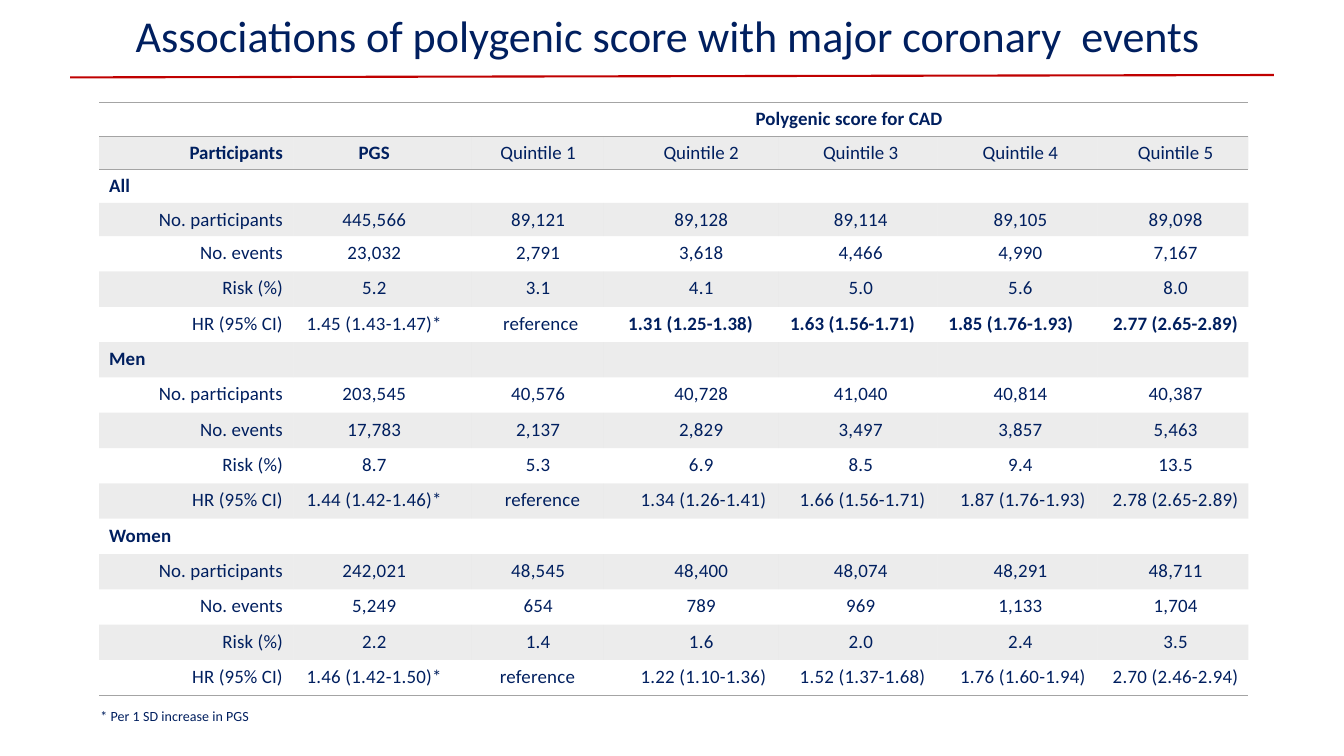
from lxml.etree import SubElement
from pptx import Presentation
from pptx.dml.color import RGBColor
from pptx.enum.shapes import MSO_CONNECTOR
from pptx.enum.text import MSO_ANCHOR, PP_ALIGN
from pptx.oxml.ns import qn
from pptx.util import Cm, Pt

COLORS = {"navy": "001F5F", "red": "C00000", "gray": "A4A4A4"}
LEFT, CENTER, RIGHT = PP_ALIGN.LEFT, PP_ALIGN.CENTER, PP_ALIGN.RIGHT
PLAIN_STYLE = "{2D5ABB26-0587-4C30-8999-92F81FD0307C}"

COLUMN_WIDTHS = [4.9, 4.47, 3.35, 4.39, 4.01, 4.04, 3.8]
ROW_HEIGHTS = [0.68] + [0.84] * 4 + [0.89] * 13
COLUMN_MARGINS = [(0, 0.27), (0, 0.41), (0.03, 0), (0.51, 0), (0.15, 0), (0.15, 0), (0.13, 0)]
BOLD_HR_INDENTS = {3: 0.61, 4: 0.3, 5: 0.28}
REFERENCE_INDENTS = {"All": 0.16, "Men": 0.25, "Women": 0}

HEADINGS = ["Participants", "PGS"] + [f"Quintile {n}" for n in range(1, 6)]
MEASURES = ["No. participants", "No. events", "Risk (%)", "HR (95% CI)"]
GROUPS = {
    "All": [
        ["445,566", "89,121", "89,128", "89,114", "89,105", "89,098"],
        ["23,032", "2,791", "3,618", "4,466", "4,990", "7,167"],
        ["5.2", "3.1", "4.1", "5.0", "5.6", "8.0"],
        ["1.45 (1.43-1.47)*", "reference", "1.31 (1.25-1.38)", "1.63 (1.56-1.71)",
         "1.85 (1.76-1.93)", "2.77 (2.65-2.89)"],
    ],
    "Men": [
        ["203,545", "40,576", "40,728", "41,040", "40,814", "40,387"],
        ["17,783", "2,137", "2,829", "3,497", "3,857", "5,463"],
        ["8.7", "5.3", "6.9", "8.5", "9.4", "13.5"],
        ["1.44 (1.42-1.46)*", "reference", "1.34 (1.26-1.41)", "1.66 (1.56-1.71)",
         "1.87 (1.76-1.93)", "2.78 (2.65-2.89)"],
    ],
    "Women": [
        ["242,021", "48,545", "48,400", "48,074", "48,291", "48,711"],
        ["5,249", "654", "789", "969", "1,133", "1,704"],
        ["2.2", "1.4", "1.6", "2.0", "2.4", "3.5"],
        ["1.46 (1.42-1.50)*", "reference", "1.22 (1.10-1.36)", "1.52 (1.37-1.68)",
         "1.76 (1.60-1.94)", "2.70 (2.46-2.94)"],
    ],
}


def color(name):
    return RGBColor.from_string(COLORS[name])


def write(frame, text, size, align=LEFT, bold=False, before=0, spacing=0):
    paragraph = frame.paragraphs[0]
    paragraph.text = text
    paragraph.alignment = align
    paragraph.space_before = Pt(before)
    font = paragraph.font
    font.name, font.size, font.bold = "Calibri", Pt(size), bold
    font.color.rgb = color("navy")
    paragraph._p.get_or_add_pPr().get_or_add_defRPr().set("spc", str(spacing))
    return paragraph


def set_frame(frame):
    frame.word_wrap = True
    frame.vertical_anchor = MSO_ANCHOR.TOP
    frame.margin_left = frame.margin_right = frame.margin_bottom = 0
    frame.margin_top = Cm(0.05)


def add_title(slide, opening, ending):
    title = slide.shapes.title
    title.left, title.top, title.width, title.height = Cm(3.42), Cm(0.16), Cm(27.08), Cm(1.42)
    set_frame(title.text_frame)
    heading = write(title.text_frame, opening, 31.5, before=1.3)
    for text, spacing in ((" ", 710), (ending, 0)):
        part = heading.add_run()
        part.text = text
        part._r.get_or_add_rPr().set("spc", str(spacing))


def add_rule(slide):
    rule = slide.shapes.add_connector(
        MSO_CONNECTOR.STRAIGHT, Cm(1.77), Cm(1.95), Cm(32.1), Cm(1.89))
    rule.line.color.rgb = color("red")
    rule.line.width = Pt(1.5)
    SubElement(rule._element.spPr, qn("a:effectLst"))


def add_footnote(slide, text):
    footnote = slide.shapes.add_textbox(Cm(2.5), Cm(17.78), Cm(4.2), Cm(0.5)).text_frame
    set_frame(footnote)
    footnote.margin_left = Cm(0.03)
    write(footnote, text, 10, before=1.2, spacing=5)


def set_border(cell, sides):
    properties = cell._tc.get_or_add_tcPr()
    for position, side in enumerate(sides):
        edge = properties.makeelement(qn(f"a:ln{side}"), {"w": str(Pt(1))})
        fill = SubElement(edge, qn("a:solidFill"))
        SubElement(fill, qn("a:srgbClr"), val=COLORS["gray"])
        properties.insert(position, edge)


def shade(cell, banded):
    if not banded:
        cell.fill.background()
        return
    cell.fill.solid()
    cell.fill.fore_color.rgb = color("gray")
    tint = cell._tc.tcPr.find(f".//{qn('a:srgbClr')}")
    SubElement(tint, qn("a:alpha"), val="20000")


def fill_cell(cell, text, align=LEFT, bold=False, margins=(0, 0), top=0.14, spacing=15):
    cell.margin_left, cell.margin_right = Cm(margins[0]), Cm(margins[1])
    cell.margin_top, cell.margin_bottom = Cm(top), 0
    cell.vertical_anchor = MSO_ANCHOR.TOP
    return write(cell.text_frame, text, 13.5, align, bold, 4, spacing)


def cell_layout(group, measure, column):
    margins = COLUMN_MARGINS[column]
    if column == 0:
        return RIGHT, False, margins
    if measure != MEASURES[-1] or column == 1:
        return CENTER, False, margins
    if column == 2:
        return CENTER, False, (REFERENCE_INDENTS[group], 0)
    bold = group == "All"
    if column not in BOLD_HR_INDENTS:
        return CENTER, bold, margins
    if bold:
        return LEFT, True, (BOLD_HR_INDENTS[column], 0)
    return RIGHT, False, (0, 0.3)


def add_results(slide):
    results = slide.shapes.add_table(
        len(ROW_HEIGHTS), len(COLUMN_WIDTHS), Cm(2.5), Cm(1.91),
        Cm(sum(COLUMN_WIDTHS)), Cm(sum(ROW_HEIGHTS))).table
    results.first_row = results.horz_banding = False
    results._tbl.tblPr.find(qn("a:tableStyleId")).text = PLAIN_STYLE
    for column, width in zip(results.columns, COLUMN_WIDTHS):
        column.width = Cm(width)
    for row, height in zip(results.rows, ROW_HEIGHTS):
        row.height = Cm(height)

    borders = {1: "TB", 2: "B", len(ROW_HEIGHTS) - 1: "B"}
    for number, row in enumerate(results.rows):
        for cell in row.cells:
            fill_cell(cell, "", top=0)
            shade(cell, number > 0 and number % 2 == 0)
            set_border(cell, borders.get(number, ""))
    for number in (0, 1):
        results.cell(number, 0).merge(results.cell(number, len(COLUMN_WIDTHS) - 1))

    spanner = fill_cell(results.cell(1, 0), "Polygenic score for CAD", bold=True,
                        top=0.13, spacing=10)
    spanner._p.get_or_add_pPr().set("marL", str(Cm(16.54)))
    for column, heading in enumerate(HEADINGS):
        fill_cell(results.cell(2, column), heading, CENTER if column else RIGHT,
                  column < 2, COLUMN_MARGINS[column], top=0.13, spacing=5)

    number = 3
    for group, rows in GROUPS.items():
        fill_cell(results.cell(number, 0), group, bold=True, margins=(0.25, 0))
        for measure, values in zip(MEASURES, rows):
            number += 1
            for column, text in enumerate([measure] + values):
                align, bold, margins = cell_layout(group, measure, column)
                fill_cell(results.cell(number, column), text, align, bold, margins,
                          spacing=20 if column and not bold else 10)
        number += 1


def main():
    deck = Presentation()
    deck.slide_width, deck.slide_height = Cm(33.87), Cm(19.05)
    slide = deck.slides.add_slide(deck.slide_layouts[5])
    add_rule(slide)
    add_title(slide, "Associations of polygenic score with major coronary", "events")
    add_results(slide)
    add_footnote(slide, "* Per 1 SD increase in PGS")
    deck.save("out.pptx")


if __name__ == "__main__":
    main()
